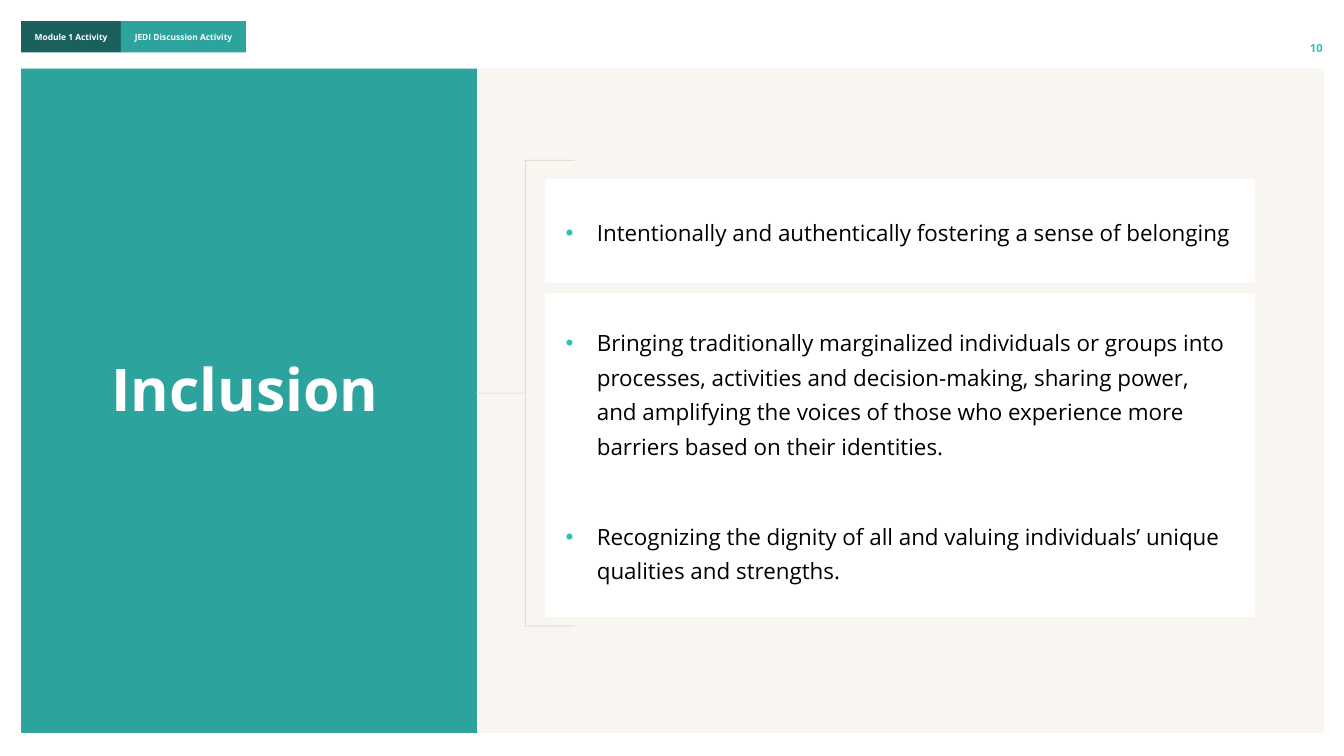
from lxml import etree
from pptx import Presentation
from pptx import util as u
from pptx.dml import color
from pptx.enum import shapes, text
from pptx.oxml import ns

COLORS = {
    "teal": "2DA39D",
    "dark_teal": "1A605D",
    "accent": "35BFB9",
    "cream": "F9F5F1",
    "bracket": "DAD2C9",
    "white": "FFFFFF",
    "black": "000000",
}
FONT = "Open Sans"

POINTS = [
    ("Intentionally and authentically fostering a sense of belonging", 1.78, 1.02),
    ("Bringing traditionally marginalized individuals or groups into processes, "
     "activities and decision-making, sharing power, and amplifying the voices of "
     "those who experience more barriers based on their identities.", 2.91, 1.8),
    ("Recognizing the dignity of all and valuing individuals’ unique qualities "
     "and strengths.", 4.83, 1.19),
]


def rgb(name):
    return color.RGBColor.from_string(COLORS[name])


def write(frame, wording, size, fill="white", bold=False, align="LEFT", spacing=None):
    paragraph = frame.paragraphs[0]
    paragraph.alignment = getattr(text.PP_ALIGN, align)
    if spacing:
        paragraph.line_spacing = spacing
    run = paragraph.add_run()
    run.text = wording
    run.font.name = FONT
    run.font.size = u.Pt(size)
    run.font.bold = bold
    run.font.color.rgb = rgb(fill)
    return paragraph


def set_insets(holder, left, top, right, bottom):
    holder.margin_left, holder.margin_top = u.Inches(left), u.Inches(top)
    holder.margin_right, holder.margin_bottom = u.Inches(right), u.Inches(bottom)


def add_panel(slide, left, top, width, height, fill, kind="RECTANGLE"):
    panel = slide.shapes.add_shape(
        getattr(shapes.MSO_SHAPE, kind),
        u.Inches(left), u.Inches(top), u.Inches(width), u.Inches(height))
    panel.shadow.inherit = False
    if fill:
        panel.fill.solid()
        panel.fill.fore_color.rgb = rgb(fill)
    else:
        panel.fill.background()
    panel.line.fill.background()
    return panel


def add_tab(slide, left, width, fill, wording):
    frame = add_panel(slide, left, 0.21, width, 0.31, fill).text_frame
    set_insets(frame, 0, 0.05, 0, 0.05)
    frame.word_wrap = True
    frame.vertical_anchor = text.MSO_ANCHOR.MIDDLE
    write(frame, wording, 6, bold=True, align="CENTER")


def add_page_number(slide, number):
    box = slide.shapes.add_textbox(
        u.Inches(12.25), u.Inches(0.21), u.Inches(0.87), u.Inches(0.33))
    frame = box.text_frame
    set_insets(frame, 0.1, 0, 0, 0)
    frame.word_wrap = True
    frame.vertical_anchor = text.MSO_ANCHOR.BOTTOM
    write(frame, number, 8, "accent", bold=True, align="RIGHT")


def place_title(slide, wording):
    title = slide.shapes.title
    title.left, title.top = u.Inches(0.78), u.Inches(3.53)
    title.width, title.height = u.Inches(3.3), u.Inches(0.84)
    frame = title.text_frame
    frame.word_wrap = True
    frame.auto_size = text.MSO_AUTO_SIZE.NONE
    frame.vertical_anchor = text.MSO_ANCHOR.TOP
    write(frame, wording, 42, bold=True, align="CENTER", spacing=0.9)
    title.element.getparent().append(title.element)


def add_bullet(paragraph):
    properties = paragraph.runs[0].font and paragraph._p.get_or_add_pPr()
    properties.set("marL", str(u.Inches(0.31)))
    properties.set("indent", str(-u.Inches(0.31)))
    bullet_color = etree.SubElement(properties, ns.qn("a:buClr"))
    etree.SubElement(bullet_color, ns.qn("a:srgbClr"), val=COLORS["accent"])
    etree.SubElement(properties, ns.qn("a:buFont"), typeface="Arial")
    etree.SubElement(properties, ns.qn("a:buChar"), char="•")


def add_point(slide, wording, top, height):
    table = slide.shapes.add_table(
        1, 1, u.Inches(5.41), u.Inches(top), u.Inches(7.03), u.Inches(height)).table
    table.first_row = False
    table.horz_banding = False
    cell = table.cell(0, 0)
    cell.fill.solid()
    cell.fill.fore_color.rgb = rgb("white")
    cell.vertical_anchor = text.MSO_ANCHOR.MIDDLE
    set_insets(cell, 0.2, 0.3, 0.2, 0.3)
    paragraph = write(cell.text_frame, wording, 16, "black", spacing=1.14)
    paragraph.space_after = u.Pt(6)
    add_bullet(paragraph)


def add_bracket(slide):
    bracket = add_panel(slide, 4.72, 1.59, 0.98, 4.62, None, "LEFT_BRACE")
    bracket.adjustments[0] = 0
    bracket.adjustments[1] = 0.5
    bracket.line.color.rgb = rgb("bracket")
    bracket.line.width = u.Pt(0.5)


def main():
    deck = Presentation()
    deck.slide_width, deck.slide_height = u.Inches(13.33), u.Inches(7.5)
    slide = deck.slides.add_slide(deck.slide_layouts.get_by_name("Title Only"))
    add_panel(slide, 0.21, 0.68, 12.92, 6.59, "cream")
    add_tab(slide, 0.21, 0.99, "dark_teal", "Module 1 Activity")
    add_tab(slide, 1.2, 1.24, "teal", "JEDI Discussion Activity")
    add_panel(slide, 0.21, 0.68, 4.52, 6.59, "teal")
    add_page_number(slide, "10")
    place_title(slide, "Inclusion")
    for wording, top, height in POINTS:
        add_point(slide, wording, top, height)
    add_bracket(slide)
    deck.save("out.pptx")


if __name__ == "__main__":
    main()
